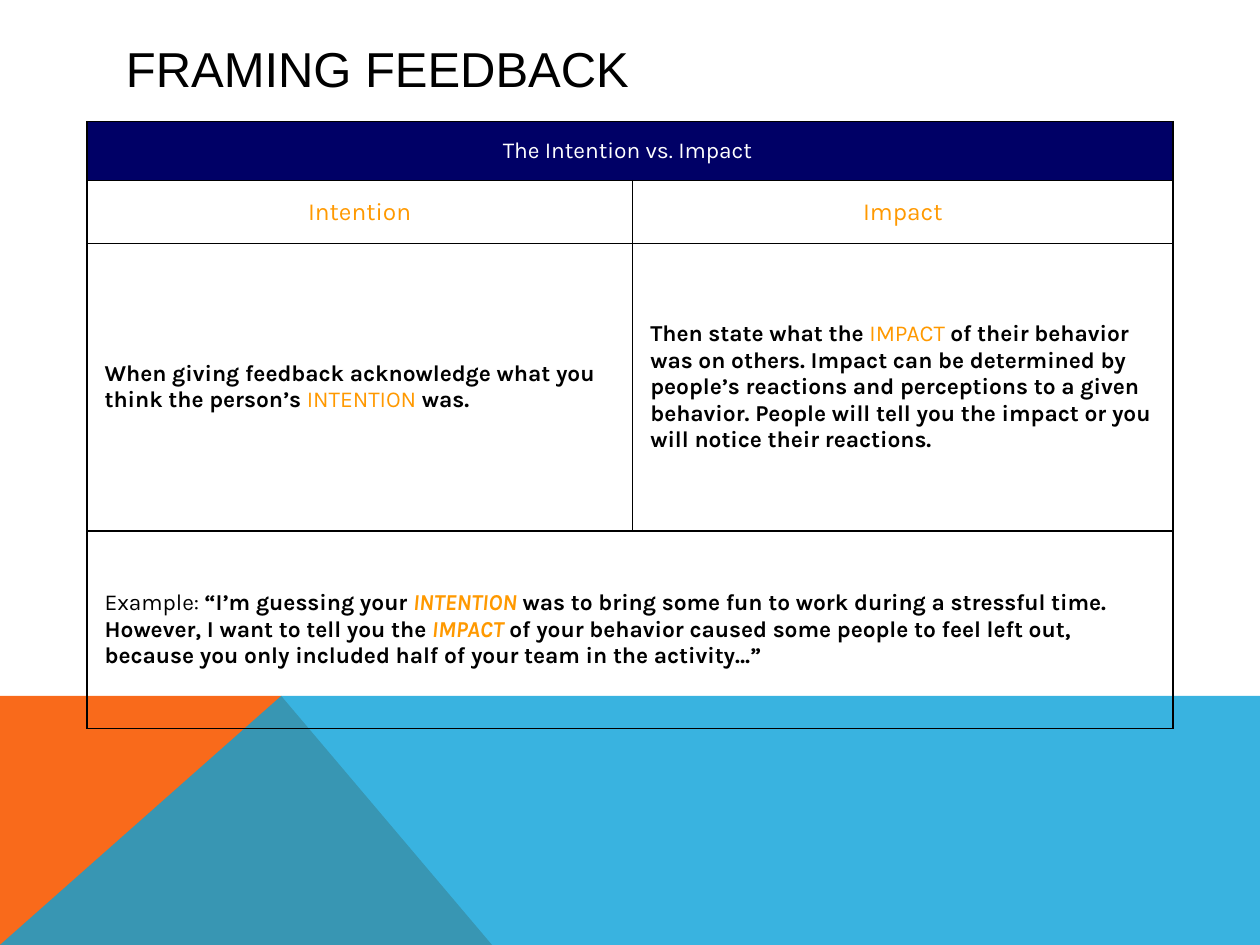
from dataclasses import dataclass

from lxml import etree
from pptx import Presentation
from pptx.dml.color import RGBColor
from pptx.enum.text import MSO_ANCHOR, PP_ALIGN
from pptx.oxml.ns import qn
from pptx.util import Cm, Pt

MIDDLE = MSO_ANCHOR.MIDDLE
LEFT, CENTER = PP_ALIGN.LEFT, PP_ALIGN.CENTER
SIDES = ("a:lnL", "a:lnR", "a:lnT", "a:lnB")


@dataclass(frozen=True)
class Theme:
    ink: str = "000000"
    white: str = "FFFFFF"
    navy: str = "000066"
    gold: str = "FF9900"
    orange: str = "F96A1B"
    blue: str = "08A1D9"
    head_font: str = "Arial"
    body_font: str = "Karla"
    title: int = 28
    label: int = 14
    body: int = 13
    border: int = 1


class Deck:
    def __init__(self, theme, slide):
        self.theme = theme
        self.slide = slide

    def style(self, font, size, color, name):
        font.size, font.name = Pt(size), name
        font.color.rgb = RGBColor.from_string(color)

    def area(self, points, color, alpha=100):
        spots = [(Cm(x), Cm(y)) for x, y in points]
        pen = self.slide.shapes.build_freeform(*spots[0])
        pen.add_line_segments(spots[1:], close=True)
        shape = pen.convert_to_shape()
        shape.shadow.inherit = False
        shape.line.fill.background()
        shape.fill.solid()
        shape.fill.fore_color.rgb = RGBColor.from_string(color)
        if alpha < 100:
            tone = shape.fill._xPr.find(".//" + qn("a:srgbClr"))
            etree.SubElement(tone, qn("a:alpha"), val=str(alpha * 1000))

    def title(self, text, box):
        frame = self.slide.shapes.add_textbox(*map(Cm, box)).text_frame
        frame.word_wrap = True
        frame.vertical_anchor = MIDDLE
        para = frame.paragraphs[0]
        para.text = text
        self.style(para.font, self.theme.title, self.theme.ink, self.theme.head_font)

    def table(self, left, top, cols, rows):
        frame = self.slide.shapes.add_table(
            len(rows), len(cols), Cm(left), Cm(top), Cm(sum(cols)), Cm(sum(rows)))
        grid = frame.table
        grid.first_row = grid.horz_banding = False
        for col, width in zip(grid.columns, cols):
            col.width = Cm(width)
        for row, height in zip(grid.rows, rows):
            row.height = Cm(height)
        for cell in grid.iter_cells():
            cell.fill.background()
            self.frame(cell)
        return grid

    def frame(self, cell):
        props = cell._tc.get_or_add_tcPr()
        for spot, side in enumerate(SIDES):
            line = etree.Element(qn(side), w=str(Pt(self.theme.border)))
            fill = etree.SubElement(line, qn("a:solidFill"))
            etree.SubElement(fill, qn("a:srgbClr"), val=self.theme.ink)
            props.insert(spot, line)

    def cell(self, cell, runs, size, color, align=LEFT, fill=None):
        cell.vertical_anchor = MIDDLE
        cell.margin_left = cell.margin_right = Cm(0.36)
        cell.margin_top = cell.margin_bottom = Cm(0.18)
        if fill:
            cell.fill.solid()
            cell.fill.fore_color.rgb = RGBColor.from_string(fill)
        para = cell.text_frame.paragraphs[0]
        para.alignment = align
        self.style(para.font, size, color, self.theme.body_font)
        for text, look in runs:
            run = para.add_run()
            run.text = text
            run.font.bold = "b" in look
            run.font.italic = "i" in look
            tone = self.theme.gold if "g" in look else color
            self.style(run.font, size, tone, self.theme.body_font)


def main():
    theme = Theme()
    show = Presentation()
    show.slide_width, show.slide_height = Cm(25.4), Cm(19.05)
    deck = Deck(theme, show.slides.add_slide(show.slide_layouts[6]))

    wide, base, edge, peak = 25.4, 19.05, 14.03, 5.67
    deck.area([(0, base), (0, edge), (peak, edge), (9.92, base)], theme.orange)
    deck.area([(0, base), (peak, edge), (wide, edge), (wide, base)], theme.blue, 80)
    deck.title("FRAMING FEEDBACK", (2.29, 0.2, 17.58, 2.34))

    grid = deck.table(1.75, 2.45, (11, 10.9), (1.19, 1.27, 5.79, 3.99))
    for row in (0, 3):
        grid.cell(row, 0).merge(grid.cell(row, 1))

    deck.cell(grid.cell(0, 0), [("The Intention vs. Impact ", "")],
              theme.body, theme.white, CENTER, theme.navy)
    for col, text in enumerate(("Intention", "Impact")):
        deck.cell(grid.cell(1, col), [(text, "")], theme.label, theme.gold, CENTER)

    notes = {
        (2, 0): [
            ("When giving feedback acknowledge what you think the person’s ", "b"),
            ("INTENTION", "g"),
            (" was.", "b"),
        ],
        (2, 1): [
            ("Then state what the ", "b"),
            ("IMPACT ", "g"),
            ("of their behavior was on others. Impact can be determined by "
             "people’s reactions and perceptions to a given behavior. People "
             "will tell you the impact or you will notice their reactions.", "b"),
        ],
        (3, 0): [
            ("Example: ", ""),
            ("“I’m guessing your ", "b"),
            ("INTENTION", "bgi"),
            (" was to bring some fun to work during a stressful time. "
             "However, I want to tell you the ", "b"),
            ("IMPACT", "bgi"),
            (" of your behavior caused some people to feel left out, because "
             "you only included half of your team in the activity…”", "b"),
        ],
    }
    for (row, col), runs in notes.items():
        deck.cell(grid.cell(row, col), runs, theme.body, theme.ink)

    show.save("out.pptx")


if __name__ == "__main__":
    main()
